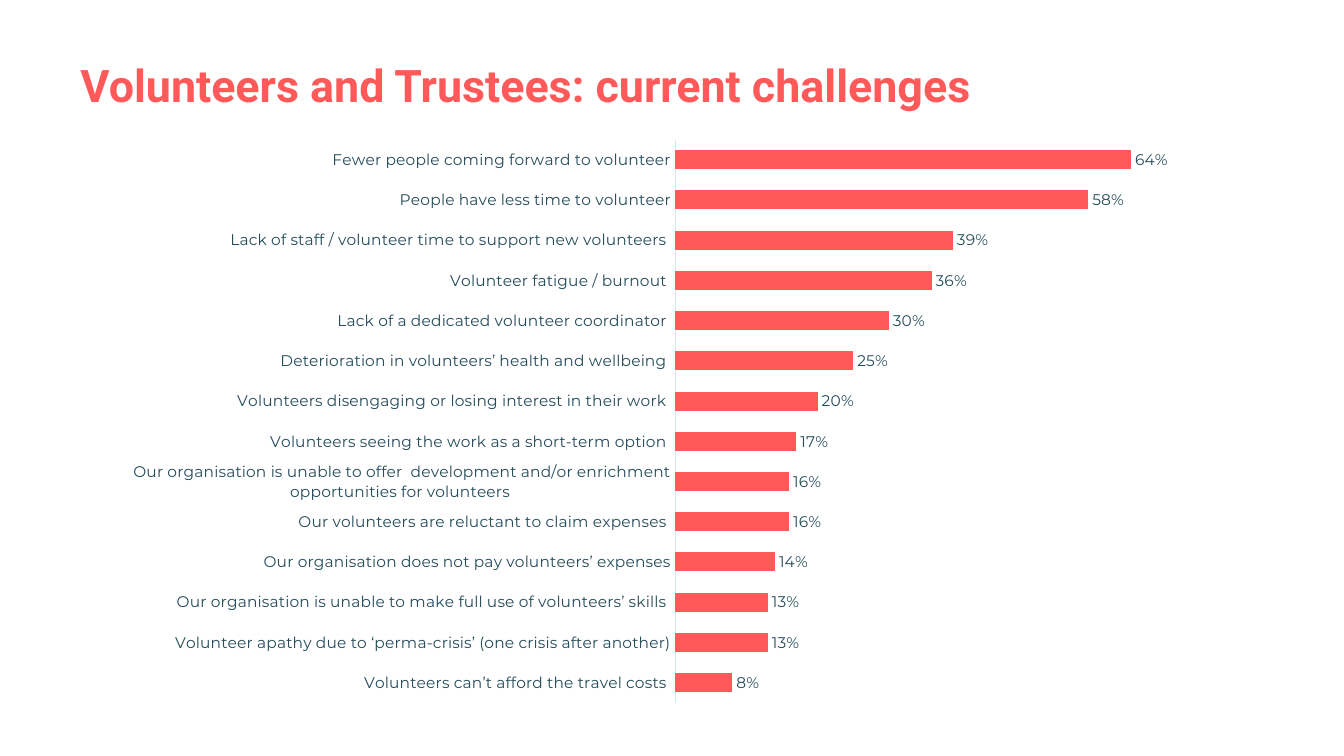
"""Build the slide on current challenges with volunteers and trustees."""
from lxml import etree
from pptx import Presentation
from pptx.chart.data import CategoryChartData
from pptx.dml.color import RGBColor
from pptx.enum.chart import XL_CHART_TYPE, XL_LABEL_POSITION, XL_TICK_MARK
from pptx.enum.text import MSO_ANCHOR
from pptx.oxml.ns import qn
from pptx.util import Pt

BAR = XL_CHART_TYPE.BAR_CLUSTERED
OUTSIDE = XL_LABEL_POSITION.OUTSIDE_END
NO_TICK = XL_TICK_MARK.NONE
MIDDLE = MSO_ANCHOR.MIDDLE
CORAL = RGBColor(0xFF, 0x59, 0x59)
TEAL = RGBColor(0x25, 0x4C, 0x5B)
PALE = RGBColor(0xD6, 0xE8, 0xEE)

CHALLENGES = [
    ("Volunteers can’t afford the travel costs ", 0.08),
    ("Volunteer apathy due to ‘perma-crisis’ (one crisis after another)", 0.13),
    ("Our organisation is unable to make full use of volunteers’ skills ", 0.13),
    ("Our organisation does not pay volunteers’ expenses", 0.14),
    ("Our volunteers are reluctant to claim expenses ", 0.16),
    ("Our organisation is unable to offer  development and/or enrichment "
     "opportunities for volunteers ", 0.16),
    ("Volunteers seeing the work as a short-term option ", 0.17),
    ("Volunteers disengaging or losing interest in their work ", 0.2),
    ("Deterioration in volunteers’ health and wellbeing ", 0.25),
    ("Lack of a dedicated volunteer coordinator ", 0.3),
    ("Volunteer fatigue / burnout ", 0.36),
    ("Lack of staff / volunteer time to support new volunteers ", 0.39),
    ("People have less time to volunteer", 0.58),
    ("Fewer people coming forward to volunteer", 0.64),
]
PLOT_LAYOUT = {"layoutTarget": "inner", "xMode": "edge", "yMode": "edge",
               "x": 0.52, "y": 0.02, "w": 0.46, "h": 0.96}


def set_font(font, *, name, size, color, bold=False):
    font.name = name
    font.size = Pt(size)
    font.color.rgb = color
    font.bold = bold


def add_text(s, text, *, left, top, width, height, **style):
    tf = s.shapes.add_textbox(Pt(left), Pt(top), Pt(width), Pt(height)).text_frame
    tf.word_wrap = True
    tf.vertical_anchor = MIDDLE
    r = tf.paragraphs[0].add_run()
    r.text = text
    set_font(r.font, **style)


prs = Presentation()
prs.slide_width, prs.slide_height = Pt(960), Pt(540)
s = prs.slides.add_slide(prs.slide_layouts[6])

add_text(s, "Volunteers and Trustees: current challenges", left=50.4, top=37,
         width=860, height=47, name="Roboto", size=32, color=CORAL, bold=True)

data = CategoryChartData(number_format="0%")
data.categories = [label for label, share in CHALLENGES]
data.add_series("Series 1", [share for label, share in CHALLENGES])
chart = s.shapes.add_chart(BAR, Pt(80), Pt(91.4), Pt(774), Pt(419), data).chart
chart.has_legend = False
chart.has_title = False
set_font(chart.font, name="Montserrat", size=11, color=TEAL)

cat_axis = chart.category_axis
cat_axis.major_tick_mark = NO_TICK
cat_axis.format.line.color.rgb = PALE
cat_axis.format.line.width = Pt(0.75)
set_font(cat_axis.tick_labels.font, name="Montserrat", size=11, color=TEAL)

val_axis = chart.value_axis
val_axis.minimum_scale, val_axis.maximum_scale = 0, 0.7
val_axis.has_major_gridlines = False
val_axis.visible = False

plot = chart.plots[0]
plot.gap_width = 112
plot.vary_by_categories = False
fill = plot.series[0].format.fill
fill.solid()
fill.fore_color.rgb = CORAL

plot.has_data_labels = True
labels = plot.data_labels
labels.show_value = True
labels.number_format = "0%"
labels.number_format_is_linked = False
labels.position = OUTSIDE
set_font(labels.font, name="Montserrat", size=11, color=TEAL)

plot_area = chart.element.find(".//" + qn("c:plotArea"))
layout = plot_area.find(qn("c:layout"))
if layout is None:
    layout = etree.Element(qn("c:layout"))
    plot_area.insert(0, layout)
manual = etree.SubElement(layout, qn("c:manualLayout"))
for tag, value in PLOT_LAYOUT.items():
    etree.SubElement(manual, qn("c:" + tag)).set("val", str(value))

prs.save("out.pptx")
